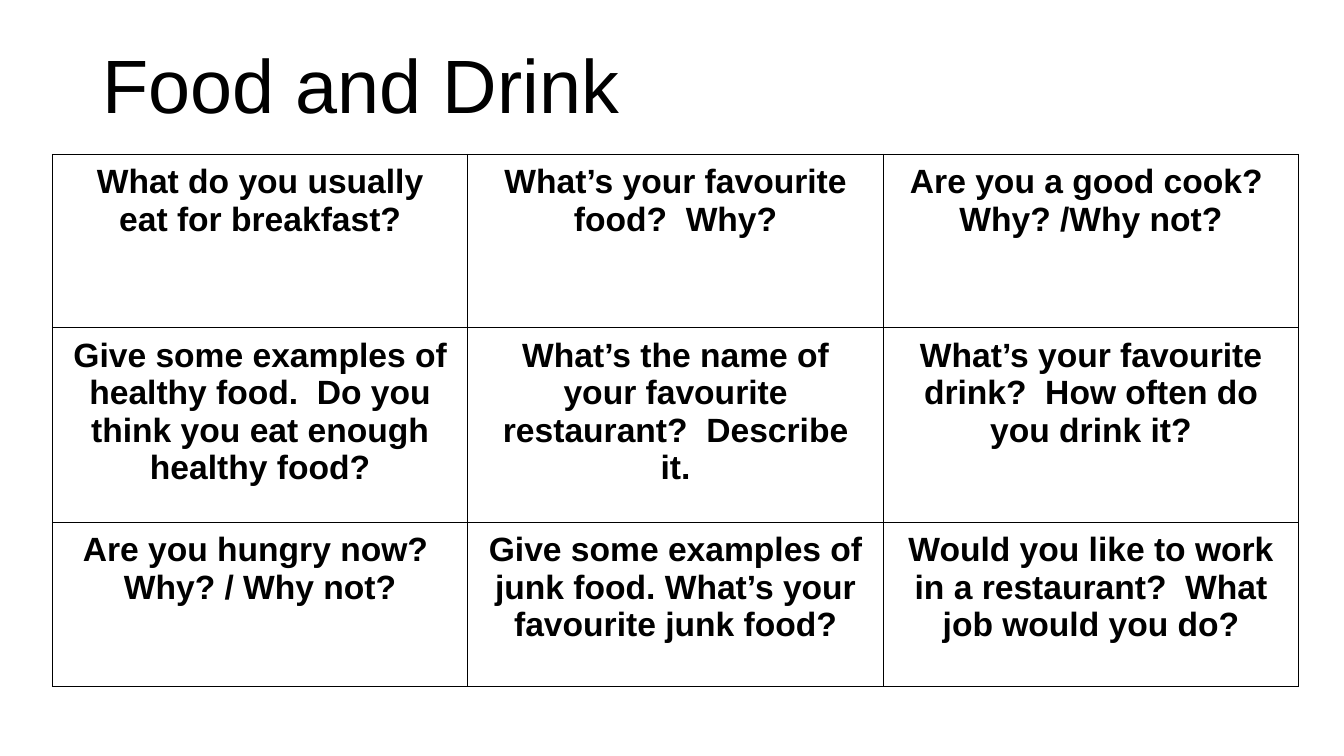
from dataclasses import dataclass

from lxml.etree import SubElement
from pptx import Presentation
from pptx.dml.color import RGBColor
from pptx.enum.text import MSO_ANCHOR, PP_ALIGN
from pptx.oxml.ns import qn
from pptx.slide import Slide
from pptx.table import _Cell
from pptx.text.text import _Paragraph
from pptx.util import Cm, Pt

BLACK = RGBColor(0x00, 0x00, 0x00)
WHITE = RGBColor(0xFF, 0xFF, 0xFF)
FONT = "Arial"
COLUMN_WIDTH = Cm(10.47)


@dataclass(frozen=True)
class QuestionRow:
    height: float
    questions: tuple[str, ...]


ROWS = (
    QuestionRow(4.37, (
        "What do you usually eat for breakfast?",
        "What’s your favourite food?  Why?",
        "Are you a good cook?  Why? /Why not?",
    )),
    QuestionRow(4.9, (
        "Give some examples of healthy food.  Do you think you eat enough healthy food?",
        "What’s the name of your favourite restaurant?  Describe it.",
        "What’s your favourite drink?  How often do you drink it?",
    )),
    QuestionRow(4.14, (
        "Are you hungry now?  Why? / Why not?",
        "Give some examples of junk food. What’s your favourite junk food?",
        "Would you like to work in a restaurant?  What job would you do?",
    )),
)


def format_text(p: _Paragraph, size: int, bold: bool = False) -> None:
    for r in p.runs:
        r.font.name = FONT
        r.font.size = Pt(size)
        r.font.bold = bold
        r.font.color.rgb = BLACK


def add_title(s: Slide, text: str) -> None:
    sp = s.shapes.add_textbox(Cm(2.34), Cm(0.81), Cm(14.99), Cm(2.59))
    tf = sp.text_frame
    tf.word_wrap = True
    tf.vertical_anchor = MSO_ANCHOR.BOTTOM
    p = tf.paragraphs[0]
    p.text = text
    p.line_spacing = 0.9
    format_text(p, 54)


def set_borders(cell: _Cell) -> None:
    tc_pr = cell._tc.get_or_add_tcPr()
    for i, side in enumerate(("lnL", "lnR", "lnT", "lnB")):
        ln = SubElement(tc_pr, qn(f"a:{side}"), w=str(Pt(1)))
        fill = SubElement(ln, qn("a:solidFill"))
        SubElement(fill, qn("a:srgbClr"), val=str(BLACK))
        tc_pr.insert(i, ln)


def fill_cell(cell: _Cell, question: str) -> None:
    cell.fill.solid()
    cell.fill.fore_color.rgb = WHITE
    cell.margin_left = cell.margin_right = Cm(0.46)
    cell.margin_top = cell.margin_bottom = Cm(0.23)
    set_borders(cell)
    p = cell.text_frame.paragraphs[0]
    p.text = question
    p.alignment = PP_ALIGN.CENTER
    format_text(p, 24, bold=True)


def add_questions(s: Slide, rows: tuple[QuestionRow, ...]) -> None:
    columns = len(rows[0].questions)
    height = Cm(sum(row.height for row in rows))
    sp = s.shapes.add_table(
        len(rows), columns, Cm(1.32), Cm(3.89), COLUMN_WIDTH * columns, height
    )
    table = sp.table
    table.first_row = False
    table.horz_banding = False
    for column in table.columns:
        column.width = COLUMN_WIDTH
    for i, row in enumerate(rows):
        table.rows[i].height = Cm(row.height)
        for j, question in enumerate(row.questions):
            fill_cell(table.cell(i, j), question)


def main() -> None:
    prs = Presentation()
    prs.slide_width = Cm(33.87)
    prs.slide_height = Cm(19.05)
    s = prs.slides.add_slide(prs.slide_layouts[6])
    add_title(s, "Food and Drink")
    add_questions(s, ROWS)
    prs.save("out.pptx")


if __name__ == "__main__":
    main()
